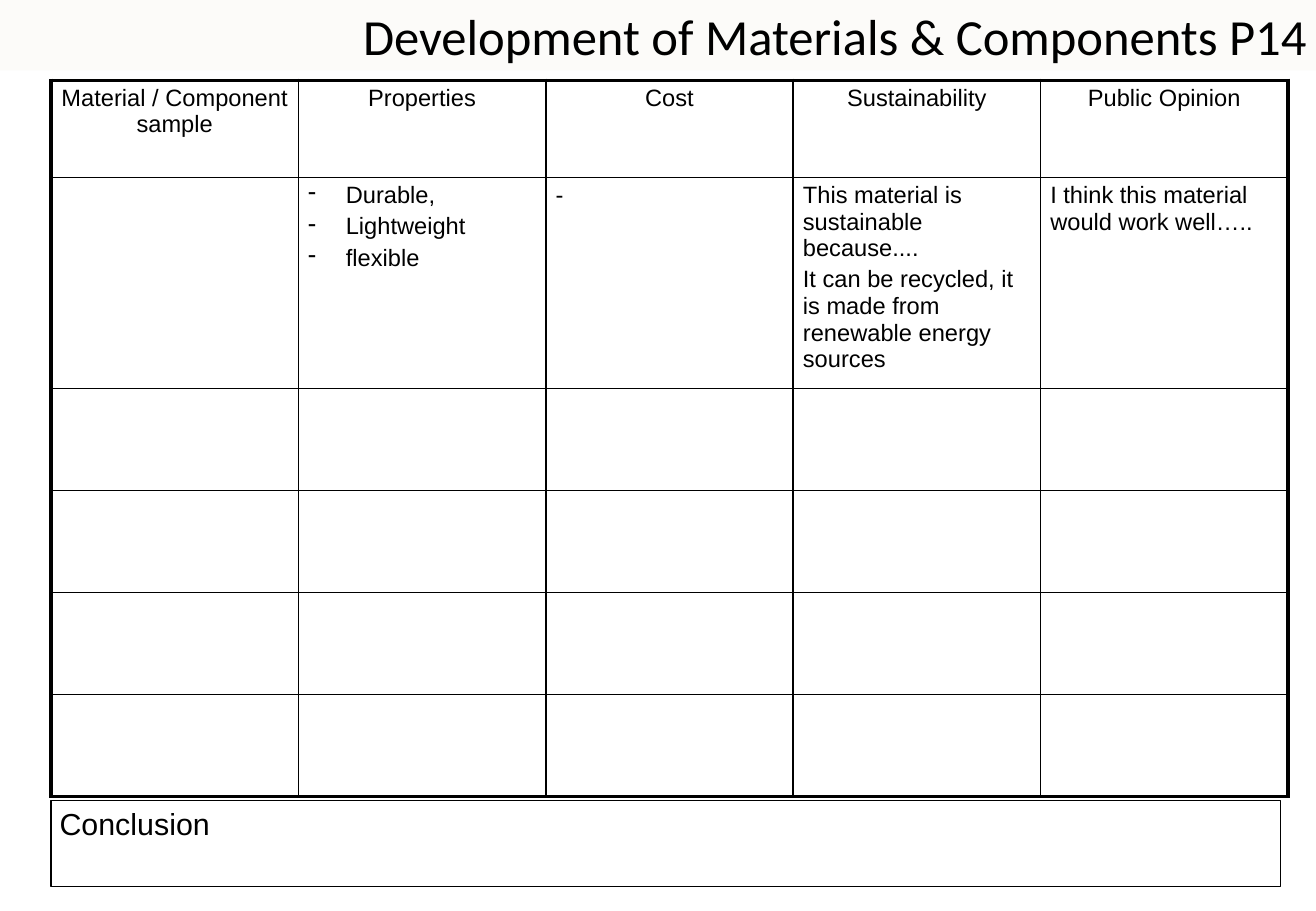
from dataclasses import dataclass

import pptx
import pptx.dml.color
import pptx.enum.shapes
import pptx.enum.text
import pptx.oxml
import pptx.oxml.ns
import pptx.util

Inches = pptx.util.Inches
Pt = pptx.util.Pt
RGB = pptx.dml.color.RGBColor
Align = pptx.enum.text.PP_ALIGN
Anchor = pptx.enum.text.MSO_ANCHOR
qn = pptx.oxml.ns.qn


@dataclass(frozen=True)
class Theme:
    ink: str = "000000"
    band: str = "FCFBF9"
    head_font: str = "Calibri"
    font: str = "Arial"
    head_size: float = 30
    cell_size: float = 14
    note_size: float = 18
    thin: float = 1
    thick: float = 2.25
    frame: float = 0.75


@dataclass(frozen=True)
class Box:
    left: float
    top: float
    width: float
    height: float

    def place(self) -> tuple:
        return tuple(map(Inches, (self.left, self.top, self.width, self.height)))


@dataclass(frozen=True)
class Entry:
    lines: tuple = ()
    align: Align = Align.LEFT
    dashed: bool = False


THEME = Theme()
HEAD = Box(0, 0, 10.83, 0.58)
GRID = Box(0.42, 0.66, 10.18, 5.9)
NOTE = Box(0.42, 6.59, 10.12, 0.71)
ROWS = (0.8, 1.74) + (0.84,) * 4
LABELS = ("Material / Component sample", "Properties", "Cost",
          "Sustainability", "Public Opinion")
ENTRIES = (
    tuple(Entry((label,), Align.CENTER) for label in LABELS),
    (
        Entry(),
        Entry(("Durable,", "Lightweight", "flexible"), dashed=True),
        Entry(("-",)),
        Entry(("This material is sustainable because....",
               "It can be recycled, it is made from renewable energy sources")),
        Entry(("I think this material would work well…..",)),
    ),
) + ((Entry(),) * len(LABELS),) * 4


def write(frame, lines: tuple, font: str, size: float, align: Align, gap: float) -> None:
    """Fill a text frame; gap is the space before a line as a share of its size."""
    frame.text = "\n".join(lines)
    frame.word_wrap = True
    for para in frame.paragraphs:
        para.alignment = align
        para.space_before = Pt(size * gap)
        for run in para.runs:
            run.font.name = font
            run.font.size = Pt(size)
            run.font.color.rgb = RGB.from_string(THEME.ink)


def inset(item, side: float) -> None:
    item.margin_left = item.margin_right = Inches(side)
    item.margin_top = item.margin_bottom = Inches(0.04)


def dash(para) -> None:
    """Give a paragraph a hanging dash bullet."""
    props = para._p.get_or_add_pPr()
    props.set("marL", str(Inches(0.31)))
    props.set("indent", str(-Inches(0.31)))
    mark = props.makeelement(qn("a:buChar"), {"char": "-"})
    props.append(mark)


def edge(cell, sides: dict) -> None:
    """Draw cell borders from a map of side letter to width in points."""
    props = cell._tc.get_or_add_tcPr()
    for spot, side in enumerate("LRTB"):
        line = props.makeelement(qn("a:ln" + side), {"w": str(Pt(sides[side]))})
        fill = line.makeelement(qn("a:solidFill"), {})
        fill.append(fill.makeelement(qn("a:srgbClr"), {"val": THEME.ink}))
        line.append(fill)
        props.insert(spot, line)


def add_head(slide) -> None:
    title = slide.shapes.title
    title.left, title.top, title.width, title.height = HEAD.place()
    title.fill.solid()
    title.fill.fore_color.rgb = RGB.from_string(THEME.band)
    frame = title.text_frame
    frame.auto_size = pptx.enum.text.MSO_AUTO_SIZE.NONE
    frame.vertical_anchor = Anchor.TOP
    inset(frame, 0.07)
    write(frame, ("Development of Materials & Components P14",),
          THEME.head_font, THEME.head_size, Align.RIGHT, 0)


def add_grid(slide) -> None:
    last_row, last_col = len(ROWS) - 1, len(LABELS) - 1
    table = slide.shapes.add_table(len(ROWS), len(LABELS), *GRID.place()).table
    table.first_row = table.horz_banding = False
    for col in table.columns:
        col.width = Inches(GRID.width / len(LABELS))
    for y, (height, entries) in enumerate(zip(ROWS, ENTRIES)):
        table.rows[y].height = Inches(height)
        for x, entry in enumerate(entries):
            cell = table.cell(y, x)
            cell.fill.background()
            inset(cell, 0.08)
            write(cell.text_frame, entry.lines, THEME.font, THEME.cell_size,
                  entry.align, 0.2)
            if entry.dashed:
                for para in cell.text_frame.paragraphs:
                    dash(para)
            outer = {"L": x == 0, "R": x == last_col, "T": y == 0, "B": y == last_row}
            edge(cell, {side: THEME.thick if rim else THEME.thin
                        for side, rim in outer.items()})


def add_note(slide) -> None:
    kind = pptx.enum.shapes.MSO_SHAPE.RECTANGLE
    note = slide.shapes.add_shape(kind, *NOTE.place())
    note.shadow.inherit = False
    note.fill.background()
    note.line.color.rgb = RGB.from_string(THEME.ink)
    note.line.width = Pt(THEME.frame)
    note.text_frame.vertical_anchor = Anchor.TOP
    inset(note.text_frame, 0.07)
    write(note.text_frame, ("Conclusion",), THEME.font, THEME.note_size, Align.LEFT, 0)


def main() -> None:
    deck = pptx.Presentation()
    deck.slide_width, deck.slide_height = Inches(10.83), Inches(7.5)
    slide = deck.slides.add_slide(deck.slide_layouts.get_by_name("Title Only"))
    add_head(slide)
    add_grid(slide)
    add_note(slide)
    deck.save("out.pptx")


if __name__ == "__main__":
    main()
